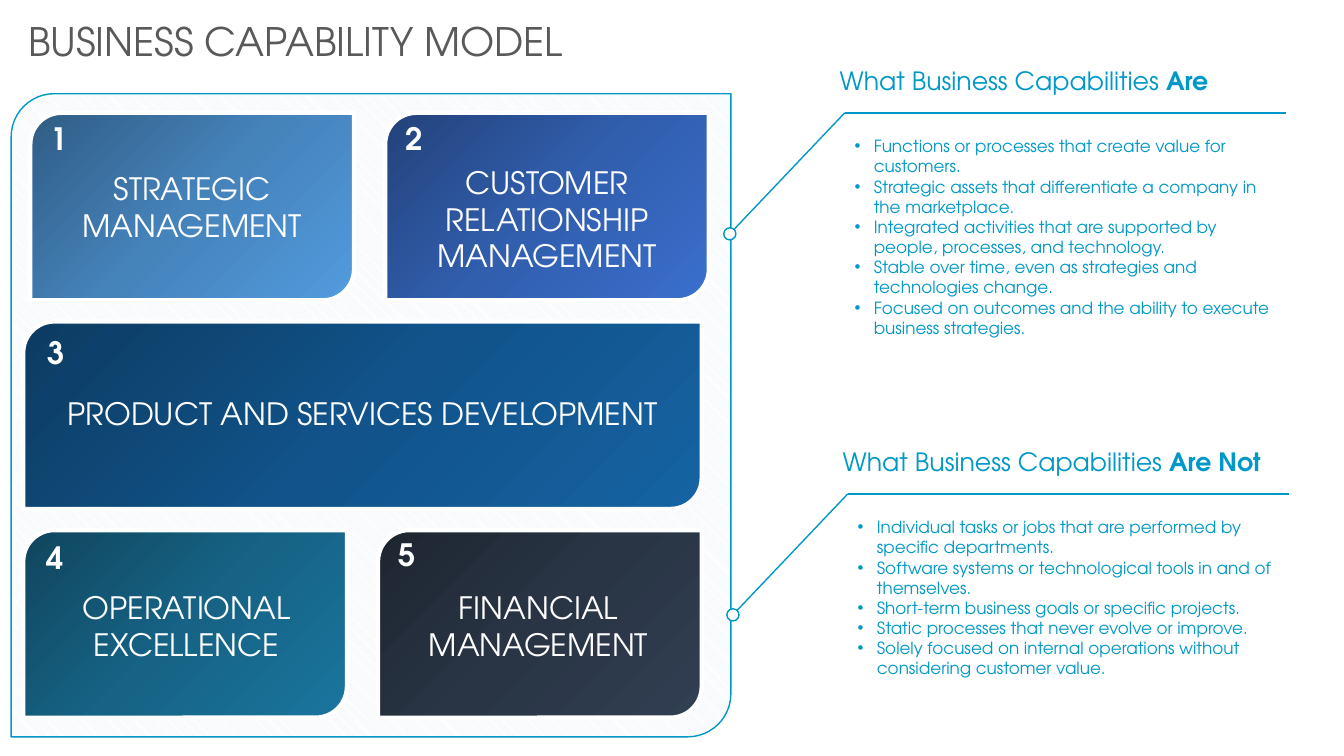
from copy import deepcopy
from dataclasses import dataclass

from pptx import Presentation
from pptx.dml.color import RGBColor as RGB
from pptx.enum.dml import MSO_PATTERN as Pattern
from pptx.enum.shapes import MSO_CONNECTOR as Connector, MSO_SHAPE as Shape
from pptx.enum.text import MSO_AUTO_SIZE as AutoSize, PP_ALIGN as Align
from pptx.oxml.xmlchemy import OxmlElement as Element
from pptx.util import Inches, Pt


@dataclass(frozen=True)
class Theme:
    font: str = "TeX Gyre Adventor"
    accent: str = "0098C6"
    title: str = "595959"
    white: str = "FFFFFF"
    hatch: str = "DEEBF7"
    title_size: int = 28
    tile_size: int = 22
    heading_size: int = 18
    bullet_size: int = 12
    thin: int = 1
    thick: int = 3


THEME = Theme()
WIDTH, HEIGHT = Inches(13.33), Inches(7.5)

# Tile grid, in percent of the slide's width and height
GRID_LEFT, GRID_TOP = 1.73, 14.93
COLUMN, ROW = 26.4, 27.6
TILE_WIDTH, TILE_HEIGHT = 24.08, 24.8
LINE_HEIGHT, TEXT_PADDING = 4.93, 1.33

# Number, lines of label, column, row, columns spanned, indent,
# label nudge, number nudge, gradient colours
TILES = [
    ("3", "PRODUCT AND SERVICES DEVELOPMENT", 1, 0, 1, 2, 0,
     (0, -0.2), (0.3, 0.93), ("0C3B61", "11538A", "1563A3")),
    ("4", "OPERATIONAL EXCELLENCE", 2, 0, 2, 1, 0,
     (0.11, 0.27), (0.23, 0.53), ("10455D", "166385", "1A759E")),
    ("5", "FINANCIAL MANAGEMENT", 2, 1, 2, 1, 0,
     (-0.11, 0.27), (0, 0.13), ("1D2530", "293545", "313F52")),
    ("1", "STRATEGIC MANAGEMENT", 2, 0, 0, 1, 0.53,
     (0, 0.07), (0, 0.27), ("305C84", "4583BB", "529BDE")),
    ("2", "CUSTOMER RELATIONSHIP MANAGEMENT", 3, 1, 0, 1, 0.53,
     (0, 1.67), (0, 0.27), ("23427A", "315EAD", "3A6FCE")),
]

# Hub position, emphasised word, body height, bullets
CALLOUTS = [
    (54.3, 30.93, "Are", 28.27, [
        "Functions or processes that create value for customers.",
        "Strategic assets that differentiate a company in the marketplace.",
        "Integrated activities that are supported by people, processes, and technology.",
        "Stable over time, even as strategies and technologies change.",
        "Focused on outcomes and the ability to execute business strategies.",
    ]),
    (54.53, 81.33, "Are Not", 22.93, [
        "Individual tasks or jobs that are performed by specific departments.",
        "Software systems or technological tools in and of themselves.",
        "Short-term business goals or specific projects.",
        "Static processes that never evolve or improve.",
        "Solely focused on internal operations without considering customer value.",
    ]),
]


def across(percent):
    return round(WIDTH * percent / 100)


def down(percent):
    return round(HEIGHT * percent / 100)


def place(left, top, width, height):
    return across(left), down(top), across(width), down(height)


def color(value):
    return RGB.from_string(value)


def style_run(run, size, tint, bold=False):
    run.font.name = THEME.font
    run.font.size = Pt(size)
    run.font.bold = bold
    run.font.color.rgb = color(tint)


def add_text(slide, box, lines, size, tint, align=Align.LEFT, bold=False):
    frame = slide.shapes.add_textbox(*place(*box)).text_frame
    frame.word_wrap = True
    frame.auto_size = AutoSize.SHAPE_TO_FIT_TEXT
    frame.text = "\n".join(lines)
    for paragraph in frame.paragraphs:
        paragraph.alignment = align
        for run in paragraph.runs:
            style_run(run, size, tint, bold)
    return frame


def add_outlined(slide, kind, box, tint, weight):
    outlined = slide.shapes.add_shape(kind, *place(*box))
    outlined.shadow.inherit = False
    outlined.line.color.rgb = color(tint)
    outlined.line.width = Pt(weight)
    return outlined


def add_line(slide, start, end):
    line = slide.shapes.add_connector(
        Connector.STRAIGHT, across(start[0]), down(start[1]), across(end[0]), down(end[1]))
    line.line.color.rgb = color(THEME.accent)
    line.line.width = Pt(THEME.thin)
    line._element.spPr.append(Element("a:effectLst"))


def fill_gradient(tile, tints):
    tile.fill.gradient()
    tile.fill.gradient_angle = 315
    first = tile.fill.gradient_stops[0]._gs
    first.addnext(deepcopy(first))
    for stop, tint, position in zip(tile.fill.gradient_stops, tints, (0, 0.5, 1)):
        stop.color.rgb = color(tint)
        stop.position = position


def add_bullet(paragraph):
    properties = paragraph._p.get_or_add_pPr()
    properties.set("marL", str(Inches(0.19)))
    properties.set("indent", str(-Inches(0.19)))
    for tag, key, value in (("a:buFont", "typeface", "Arial"), ("a:buChar", "char", "•")):
        mark = Element(tag)
        mark.set(key, value)
        properties.append(mark)


def add_frame(slide):
    frame = add_outlined(slide, Shape.ROUND_2_DIAG_RECTANGLE,
                         (0.83, 12.4, 53.55, 85.07), THEME.accent, THEME.thin)
    frame.adjustments[0] = 0.067
    frame.fill.patterned()
    frame.fill.pattern = Pattern.DARK_DOWNWARD_DIAGONAL
    frame.fill.fore_color.rgb = color(THEME.hatch)
    frame.fill.back_color.rgb = color(THEME.white)


def add_tile(slide, number, label, lines, column, row, span, indent,
             label_nudge, number_nudge, tints):
    left = GRID_LEFT + column * COLUMN + indent
    top = GRID_TOP + row * ROW
    width = TILE_WIDTH + (span - 1) * COLUMN
    tile = add_outlined(slide, Shape.ROUND_2_DIAG_RECTANGLE,
                        (left, top, width, TILE_HEIGHT), THEME.white, THEME.thick)
    fill_gradient(tile, tints)

    label_height = lines * LINE_HEIGHT + TEXT_PADDING
    label_top = top + (TILE_HEIGHT - label_height) / 2 + label_nudge[1]
    add_text(slide, (left + label_nudge[0], label_top, width, label_height),
             [label], THEME.tile_size, THEME.white, Align.CENTER)
    add_text(slide, (left + number_nudge[0], top + number_nudge[1],
                     4.28, LINE_HEIGHT + TEXT_PADDING),
             [number], THEME.tile_size, THEME.white, Align.CENTER, bold=True)


def add_callout(slide, hub_x, hub_y, emphasis, body_height, bullets):
    # Leader line with its hub
    elbow = (hub_x + 8.55, hub_y - 16)
    add_line(slide, (hub_x, hub_y), elbow)
    add_line(slide, elbow, (hub_x + 41.4, elbow[1]))
    hub = add_outlined(slide, Shape.OVAL, (hub_x - 0.45, hub_y - 0.8, 0.9, 1.6),
                       THEME.accent, THEME.thin)
    hub.fill.solid()
    hub.fill.fore_color.rgb = color(THEME.white)

    # Heading and bullets
    heading = add_text(slide, (hub_x + 7.43, hub_y - 22.93, 35.03, 5.33),
                       ["What Business Capabilities "], THEME.heading_size, THEME.accent)
    strong = heading.paragraphs[0].add_run()
    strong.text = emphasis
    style_run(strong, THEME.heading_size, THEME.accent, bold=True)
    body = add_text(slide, (elbow[0], hub_y - 13.6, 33.53, body_height),
                    bullets, THEME.bullet_size, THEME.accent)
    for paragraph in body.paragraphs:
        add_bullet(paragraph)


def main():
    deck = Presentation()
    deck.slide_width, deck.slide_height = WIDTH, HEIGHT
    slide = deck.slides.add_slide(deck.slide_layouts[6])
    add_frame(slide)
    add_text(slide, (1.35, 1.6, 53.48, 7.6), ["BUSINESS CAPABILITY MODEL"],
             THEME.title_size, THEME.title)
    for tile in TILES:
        add_tile(slide, *tile)
    for callout in CALLOUTS:
        add_callout(slide, *callout)
    deck.save("out.pptx")


if __name__ == "__main__":
    main()
